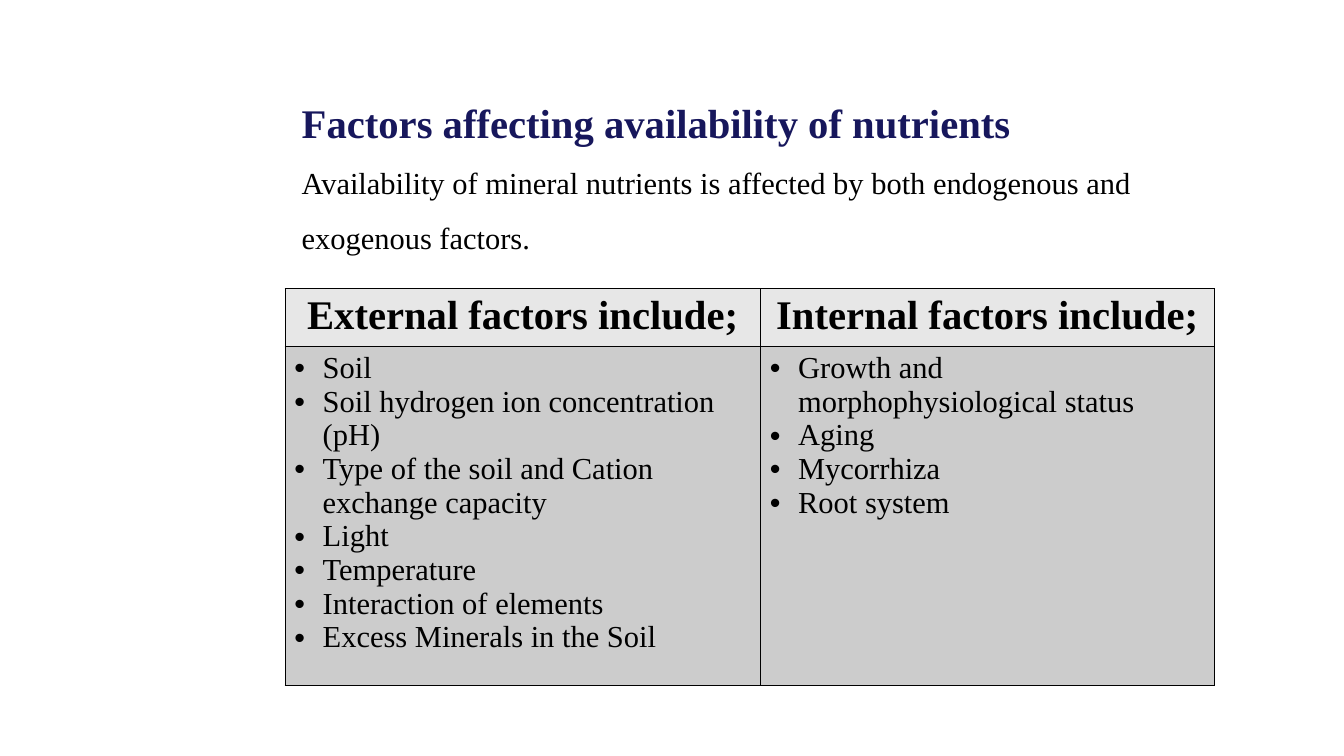
from lxml.etree import SubElement
from pptx import Presentation
from pptx.dml.color import RGBColor
from pptx.enum.text import MSO_ANCHOR as Anchor, MSO_AUTO_SIZE as AutoSize, PP_ALIGN as Align
from pptx.oxml.ns import qn
from pptx.util import Inches, Pt

FONT = "Times New Roman"
BLACK = RGBColor(0x00, 0x00, 0x00)
NAVY = RGBColor(0x17, 0x17, 0x5C)
HEADER_GRAY = RGBColor(0xE7, 0xE7, 0xE7)
BODY_GRAY = RGBColor(0xCC, 0xCC, 0xCC)

TITLE = "Factors affecting availability of nutrients"
INTRO = ("Availability of mineral nutrients is affected by both endogenous "
         "and exogenous factors.")
FACTORS = {
    "External factors include;": [
        "Soil",
        "Soil hydrogen ion concentration (pH)",
        "Type of the soil and Cation exchange capacity",
        "Light",
        "Temperature",
        "Interaction of elements",
        "Excess Minerals in the Soil",
    ],
    "Internal factors include;": [
        "Growth and morphophysiological status",
        "Aging",
        "Mycorrhiza",
        "Root system",
    ],
}


def add_bullet(para, indent=0.31):
    properties = para._p.get_or_add_pPr()
    properties.set("marL", str(Inches(indent)))
    properties.set("indent", str(-Inches(indent)))
    SubElement(properties, qn("a:buFont"), typeface="Arial")
    SubElement(properties, qn("a:buChar"), char="•")


def write_text(frame, *lines, size=24, color=BLACK, bold=False,
               align=Align.LEFT, spacing=1.0, bullet=False):
    """Fill a text frame with one paragraph for each line."""
    frame.word_wrap = True
    for index, line in enumerate(lines):
        para = frame.paragraphs[0] if index == 0 else frame.add_paragraph()
        if bullet:
            add_bullet(para)
        para.alignment = align
        para.line_spacing = spacing
        span = para.add_run()
        span.text = line
        span.font.name = FONT
        span.font.size = Pt(size)
        span.font.bold = bold
        span.font.color.rgb = color


def format_cell(cell, fill):
    """Give a cell thin black borders and a solid fill."""
    properties = cell._tc.get_or_add_tcPr()
    for side in ("lnL", "lnR", "lnT", "lnB"):
        border = SubElement(properties, qn(f"a:{side}"), w=str(Pt(1)))
        solid = SubElement(border, qn("a:solidFill"))
        SubElement(solid, qn("a:srgbClr"), val=str(BLACK))
    cell.fill.solid()
    cell.fill.fore_color.rgb = fill


def add_heading(page, left, top, width):
    title = page.shapes.title
    title.left, title.top = Inches(left), Inches(top)
    title.width, title.height = Inches(width), Inches(0.9)
    frame = title.text_frame
    frame.auto_size = AutoSize.NONE
    frame.vertical_anchor = Anchor.TOP
    write_text(frame, TITLE, size=32, color=NAVY, bold=True, spacing=1.5)

    intro = page.shapes.add_textbox(Inches(left), Inches(top + 0.8),
                                    Inches(width), Inches(1.3))
    write_text(intro.text_frame, INTRO, spacing=1.5)


def add_factor_table(page, left, top, widths, heights):
    shape = page.shapes.add_table(2, len(FACTORS), Inches(left), Inches(top),
                                  Inches(sum(widths)), Inches(sum(heights)))
    table = shape.table
    table.first_row = table.horz_banding = False
    for row, height in zip(table.rows, heights):
        row.height = Inches(height)
    for index, (heading, factors) in enumerate(FACTORS.items()):
        table.columns[index].width = Inches(widths[index])
        header, body = table.cell(0, index), table.cell(1, index)
        format_cell(header, HEADER_GRAY)
        format_cell(body, BODY_GRAY)
        write_text(header.text_frame, heading, size=32, bold=True, align=Align.CENTER)
        write_text(body.text_frame, *factors, bullet=True)


def main():
    deck = Presentation()
    deck.slide_width, deck.slide_height = Inches(14.7), Inches(8.27)
    page = deck.slides.add_slide(deck.slide_layouts[5])
    add_heading(page, left=3.2, top=0.75, width=10)
    add_factor_table(page, left=3.12, top=3.16, widths=(5.2, 4.96), heights=(0.59, 3.42))
    deck.save("out.pptx")


if __name__ == "__main__":
    main()
